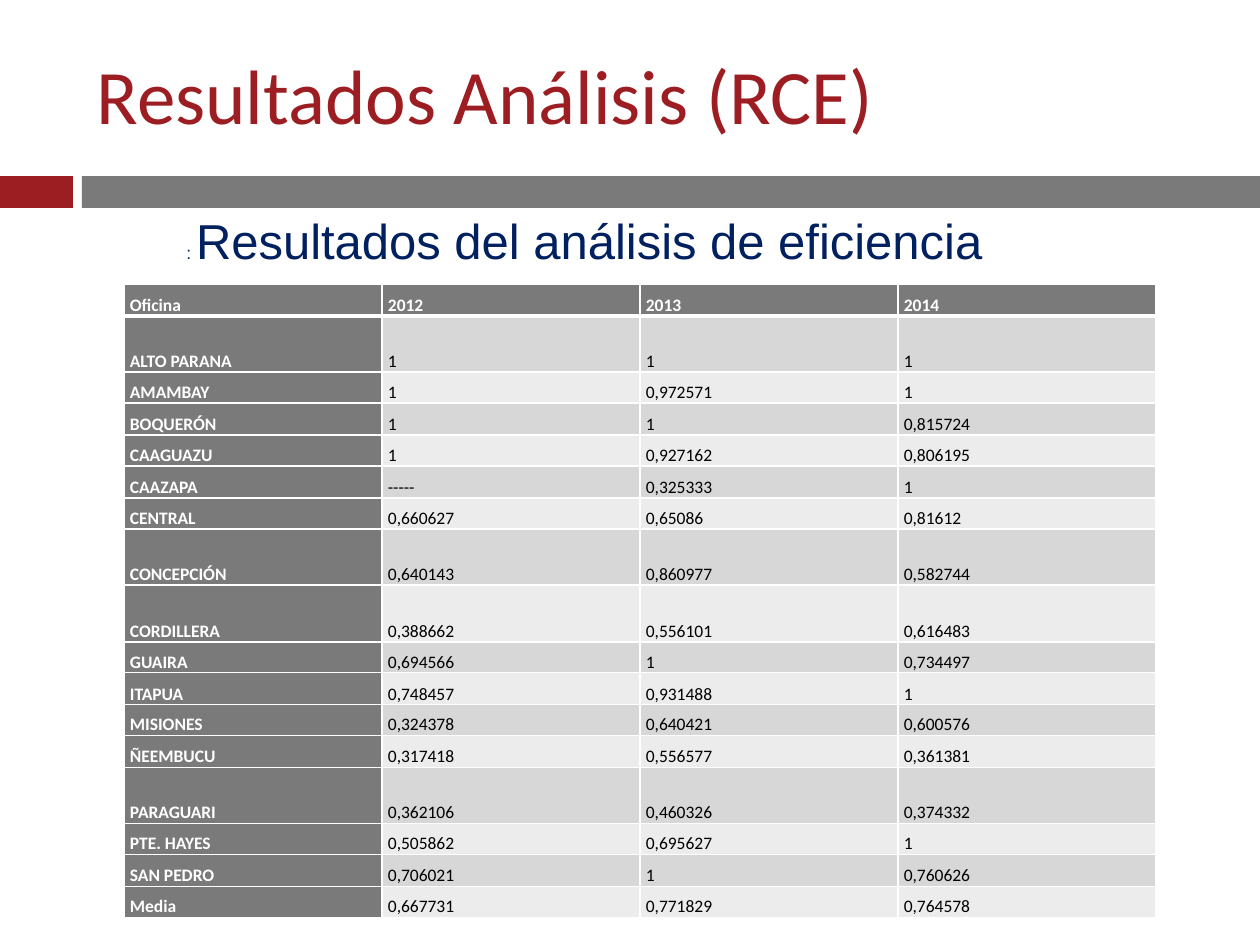
from lxml import etree
from pptx import Presentation
from pptx import util as u
from pptx.dml.color import RGBColor
from pptx.enum import shapes, text
from pptx.oxml import ns

SCALE = u.Inches(10) / 1260
RED, GRAY, NAVY, WHITE, BLACK = "9C1D22", "7A7A7A", "002060", "FFFFFF", "000000"
BANDS = ["D7D7D7", "ECECEC"]
hex_color = RGBColor.from_string


def px(*lengths):
    return [round(length * SCALE) for length in lengths]


def write(paragraph, words, size, color, font="Calibri", bold=False, align="LEFT", spacing=1.0):
    paragraph.alignment = getattr(text.PP_ALIGN, align)
    paragraph.line_spacing = spacing
    run = paragraph.add_run()
    run.text = words
    run.font.size = u.Pt(size)
    run.font.name = font
    run.font.bold = bold
    run.font.color.rgb = hex_color(color)


prs = Presentation()
prs.slide_width, prs.slide_height = px(1260, 945)
slide = prs.slides.add_slide(prs.slide_layouts[5])

for left, width, color in [(0, 73, RED), (82, 1178, GRAY)]:
    bar = slide.shapes.add_shape(shapes.MSO_SHAPE.RECTANGLE, *px(left, 176, width, 32))
    bar.shadow.inherit = False
    bar.fill.solid()
    bar.fill.fore_color.rgb = hex_color(color)
    bar.line.fill.background()

title = slide.shapes.title
title.left, title.top, title.width, title.height = px(84, 26, 1124, 136)
title.text_frame.auto_size = text.MSO_AUTO_SIZE.NONE
title.text_frame.vertical_anchor = text.MSO_ANCHOR.MIDDLE
write(title.text_frame.paragraphs[0], "Resultados Análisis (RCE)", 44, RED)

subtitle = slide.shapes.add_textbox(*px(174, 204, 832, 111)).text_frame
subtitle.word_wrap = False
subtitle.vertical_anchor = text.MSO_ANCHOR.TOP
for words, size in [(": ", 10), ("Resultados del análisis de eficiencia", 28)]:
    write(subtitle.paragraphs[0], words, size, NAVY, font="Arial")

results = [
    ("Oficina", "2012", "2013", "2014"),
    ("ALTO PARANA", "1", "1", "1"),
    ("AMAMBAY", "1", "0,972571", "1"),
    ("BOQUERÓN", "1", "1", "0,815724"),
    ("CAAGUAZU", "1", "0,927162", "0,806195"),
    ("CAAZAPA", "-----", "0,325333", "1"),
    ("CENTRAL", "0,660627", "0,65086", "0,81612"),
    ("CONCEPCIÓN", "0,640143", "0,860977", "0,582744"),
    ("CORDILLERA", "0,388662", "0,556101", "0,616483"),
    ("GUAIRA", "0,694566", "1", "0,734497"),
    ("ITAPUA", "0,748457", "0,931488", "1"),
    ("MISIONES", "0,324378", "0,640421", "0,600576"),
    ("ÑEEMBUCU", "0,317418", "0,556577", "0,361381"),
    ("PARAGUARI", "0,362106", "0,460326", "0,374332"),
    ("PTE. HAYES", "0,505862", "0,695627", "1"),
    ("SAN PEDRO", "0,706021", "1", "0,760626"),
    ("Media", "0,667731", "0,771829", "0,764578"),
]
row_edges = [284, 316, 372, 403, 435, 466, 498, 529, 585,
             642, 673, 705, 736, 768, 824, 855, 887, 918]

efficiency = slide.shapes.add_table(
    len(results), 4, *px(124, row_edges[0], 4 * 258, row_edges[-1] - row_edges[0])).table
for column in efficiency.columns:
    column.width = px(258)[0]

for r, office in enumerate(results):
    efficiency.rows[r].height = px(row_edges[r + 1] - row_edges[r])[0]
    for c, value in enumerate(office):
        cell = efficiency.cell(r, c)
        heading = r == 0 or c == 0
        cell.vertical_anchor = text.MSO_ANCHOR.BOTTOM
        cell.margin_left, cell.margin_right, cell.margin_top, cell.margin_bottom = px(6, 6, 0, 0)
        write(cell.text_frame.paragraphs[0], value, 10, WHITE if heading else BLACK,
              bold=heading, align="JUSTIFY", spacing=1.15)
        properties = cell._tc.get_or_add_tcPr()
        for side in "LRTB":
            thick = (r, side) in [(0, "B"), (1, "T")]
            border = etree.SubElement(properties, ns.qn(f"a:ln{side}"), w=str(u.Pt(3 if thick else 1)))
            paint = etree.SubElement(border, ns.qn("a:solidFill"))
            etree.SubElement(paint, ns.qn("a:srgbClr"), val=WHITE)
        cell.fill.solid()
        cell.fill.fore_color.rgb = hex_color(GRAY if heading else BANDS[(r - 1) % 2])

prs.save("out.pptx")
